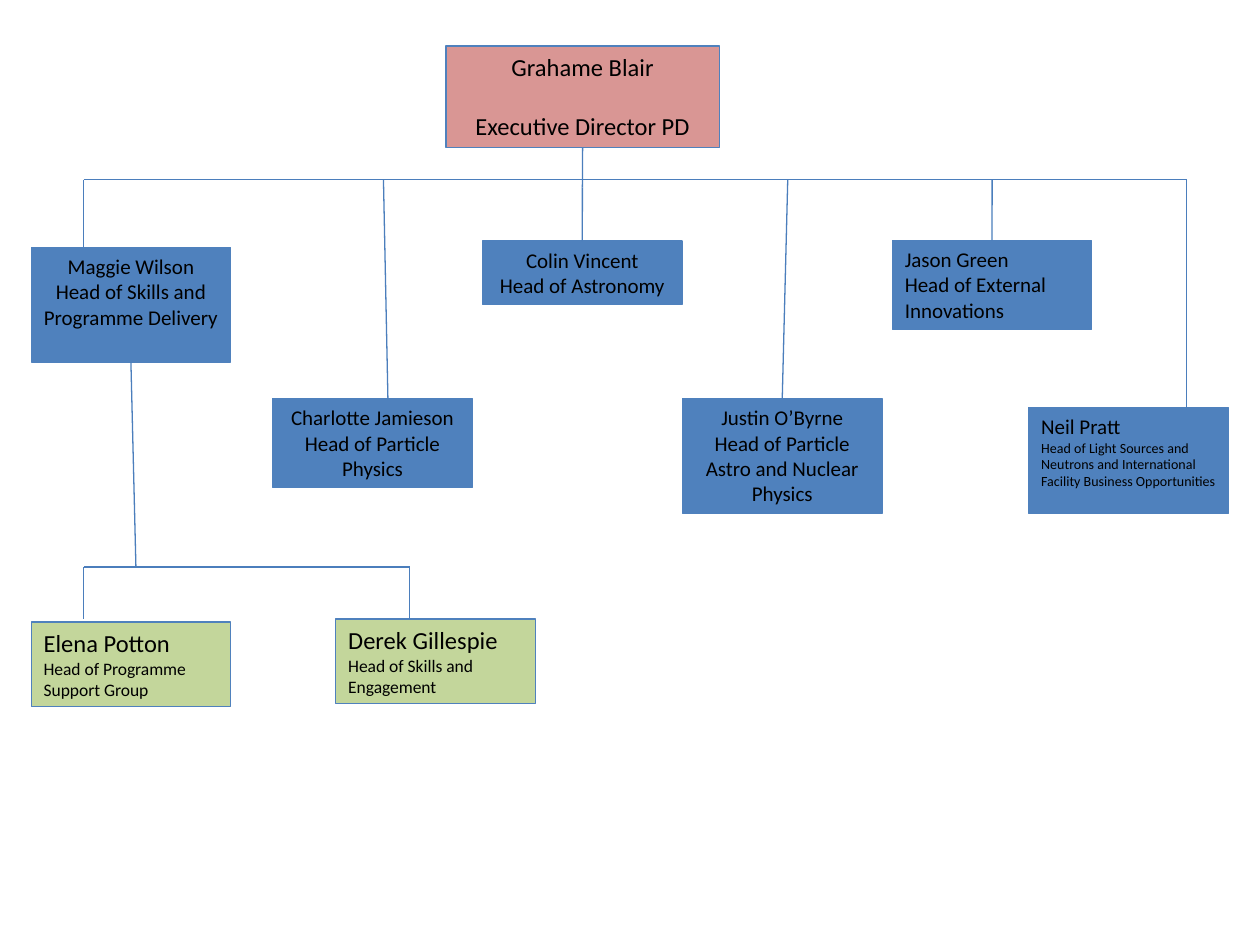
from lxml import etree
from pptx import Presentation
from pptx.dml.color import RGBColor
from pptx.enum.shapes import MSO_CONNECTOR, MSO_SHAPE
from pptx.enum.text import MSO_ANCHOR, MSO_AUTO_SIZE, PP_ALIGN
from pptx.oxml.ns import qn
from pptx.util import Cm, Pt

RECTANGLE = MSO_SHAPE.RECTANGLE
STRAIGHT = MSO_CONNECTOR.STRAIGHT
TOP_ANCHOR = MSO_ANCHOR.TOP
GROW = MSO_AUTO_SIZE.SHAPE_TO_FIT_TEXT
LEFT, CENTER = PP_ALIGN.LEFT, PP_ALIGN.CENTER

RED = RGBColor(0xD9, 0x96, 0x94)
BLUE = RGBColor(0x4F, 0x81, 0xBD)
GREEN = RGBColor(0xC3, 0xD6, 0x9B)
LINE_BLUE = RGBColor(0x4B, 0x7E, 0xBC)
BLACK = RGBColor(0, 0, 0)

TOP_SIDE, BOTTOM_SIDE = 0, 2
BOX_WIDTH = 4.02
HEADS_BUS = 3.62
TEAM_BUS = 11.43
FIRST_DROP = 1.69
LAST_DROP = 23.92
DEREK_DROP = 8.26
DIRECTOR_DROP = 11.74


def add_text(paragraph, text, size, align=LEFT, space_before=0, font="Calibri", color=BLACK):
    paragraph.alignment = align
    paragraph.space_before = Pt(space_before)
    run = paragraph.add_run()
    run.text = text
    run.font.name = font
    run.font.size = Pt(size)
    run.font.color.rgb = color


class OrganisationChart:
    line_width = Pt(0.75)

    def __init__(self, slide):
        self.slide = slide

    def box(self, name, role, left, top, height, fill=BLUE, width=BOX_WIDTH,
            name_size=12, role_size=12, align=LEFT, gap=0):
        shape = self.slide.shapes.add_shape(RECTANGLE, Cm(left), Cm(top), Cm(width), Cm(height))
        shape.shadow.inherit = False
        shape.fill.solid()
        shape.fill.fore_color.rgb = fill
        shape.line.color.rgb = BLUE
        shape.line.width = self.line_width
        frame = shape.text_frame
        frame.word_wrap = True
        frame.auto_size = GROW
        frame.vertical_anchor = TOP_ANCHOR
        add_text(frame.paragraphs[0], name, name_size, align=align)
        add_text(frame.add_paragraph(), role, role_size, align=align, space_before=gap)
        return shape

    def line(self, start, end, begin_box=None, end_box=None):
        connector = self.slide.shapes.add_connector(STRAIGHT, *map(Cm, start + end))
        connector.line.color.rgb = LINE_BLUE
        connector.line.width = self.line_width
        etree.SubElement(connector._element.spPr, qn("a:effectLst"))
        if begin_box is not None:
            connector.begin_connect(begin_box, BOTTOM_SIDE)
        if end_box is not None:
            connector.end_connect(end_box, TOP_SIDE)


def main():
    presentation = Presentation()
    presentation.slide_width = Cm(25.4)
    presentation.slide_height = Cm(19.05)
    chart = OrganisationChart(presentation.slides.add_slide(presentation.slide_layouts[6]))

    director = chart.box("Grahame Blair", "Executive Director PD", 8.99, 0.93, 2.05, fill=RED,
                         width=5.51, name_size=14, role_size=14, align=CENTER, gap=17)
    innovations = chart.box("Jason Green", "Head of External Innovations", 17.99, 4.85, 1.79)
    astronomy = chart.box("Colin Vincent", "Head of Astronomy", 9.73, 4.86, 1.28, align=CENTER)
    nuclear = chart.box("Justin O’Byrne", "Head of Particle Astro and Nuclear Physics",
                        13.76, 8.04, 2.31, align=CENTER)
    chart.box("Neil Pratt",
              "Head of Light Sources and Neutrons and International Facility Business Opportunities",
              20.74, 8.22, 2.13, role_size=8)
    chart.box("Charlotte Jamieson", "Head of Particle Physics", 5.5, 8.04, 1.79, align=CENTER)
    skills = chart.box("Maggie Wilson", "Head of Skills and Programme Delivery",
                       0.63, 4.99, 2.31, align=CENTER)
    for name, role, left, top in (
        ("Derek Gillespie", "Head of Skills and Engagement", 6.77, 12.48),
        ("Elena Potton", "Head of Programme Support Group", 0.63, 12.54),
    ):
        chart.box(name, role, left, top, 1.7, fill=GREEN, name_size=14, role_size=10)

    chart.line((FIRST_DROP, HEADS_BUS), (LAST_DROP, HEADS_BUS))
    chart.line((DIRECTOR_DROP, 2.98), (DIRECTOR_DROP, 3.78), begin_box=director)
    chart.line((DIRECTOR_DROP, 3.78), (DIRECTOR_DROP, 4.86), end_box=astronomy)
    for start, end, head in (
        (FIRST_DROP, (FIRST_DROP, 4.99), None),
        (20, (20, 4.85), innovations),
        (LAST_DROP, (LAST_DROP, 8.22), None),
        (15.88, (15.77, 8.04), nuclear),
        (7.73, (7.82, 8.04), None),
    ):
        chart.line((start, HEADS_BUS), end, end_box=head)

    chart.line((2.64, 7.3), (2.74, TEAM_BUS), begin_box=skills)
    chart.line((FIRST_DROP, TEAM_BUS), (DEREK_DROP, TEAM_BUS))
    for drop in (DEREK_DROP, FIRST_DROP):
        chart.line((drop, TEAM_BUS), (drop, 12.48))

    presentation.save("out.pptx")


if __name__ == "__main__":
    main()
